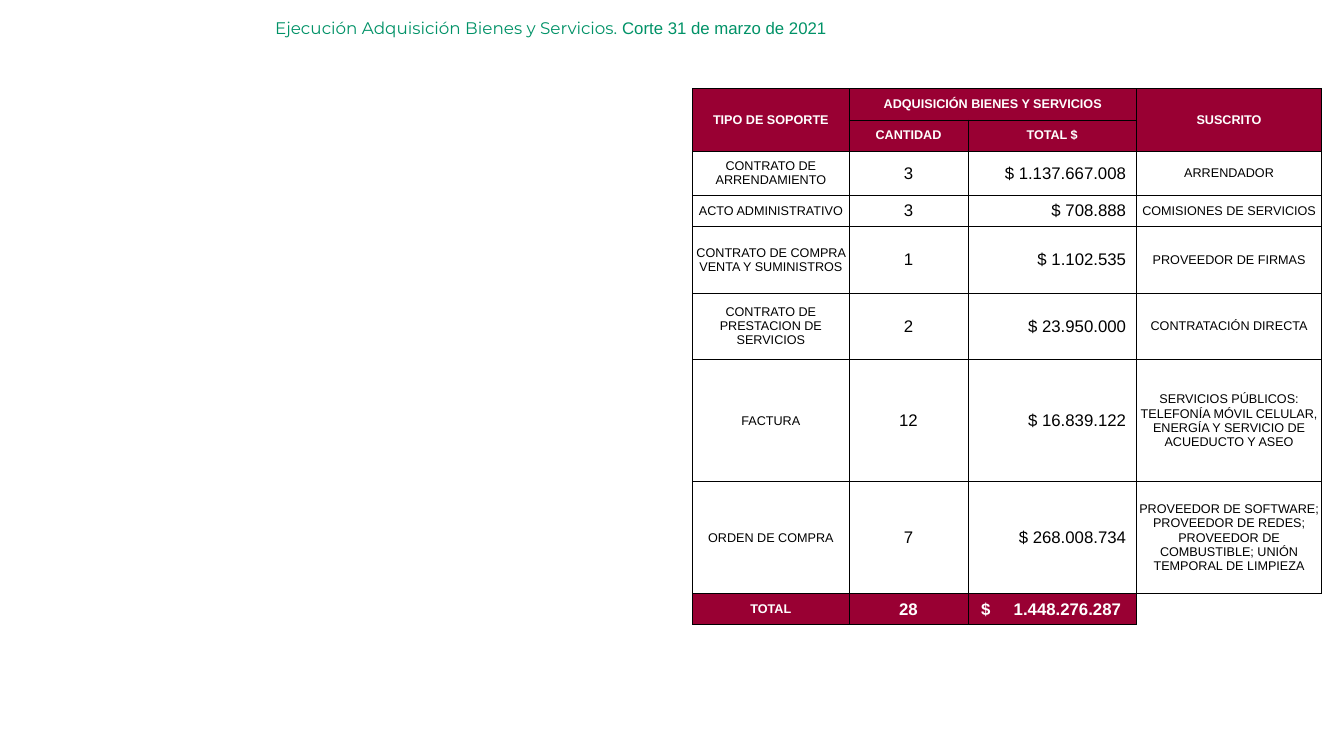
import pptx
import pptx.dml.color
import pptx.enum.text
import pptx.oxml
import pptx.oxml.ns
import pptx.util
from pptx.util import Inches

# Content
HEADING = [("Ejecución Adquisición Bienes y Servicios. ", "Montserrat"),
           ("Corte 31 de marzo de 2021", "Arial")]
ROWS = [
    ("TIPO DE SOPORTE", "ADQUISICIÓN BIENES Y SERVICIOS", "", "SUSCRITO"),
    ("", "CANTIDAD", "TOTAL $", ""),
    ("CONTRATO DE ARRENDAMIENTO", "3", "$ 1.137.667.008", "ARRENDADOR"),
    ("ACTO ADMINISTRATIVO", "3", "$ 708.888", "COMISIONES DE SERVICIOS"),
    ("CONTRATO DE COMPRA VENTA Y SUMINISTROS", "1", "$ 1.102.535", "PROVEEDOR DE FIRMAS"),
    ("CONTRATO DE PRESTACION DE SERVICIOS", "2", "$ 23.950.000", "CONTRATACIÓN DIRECTA"),
    ("FACTURA", "12", "$ 16.839.122",
     "SERVICIOS PÚBLICOS: TELEFONÍA MÓVIL CELULAR, ENERGÍA Y SERVICIO DE ACUEDUCTO Y ASEO"),
    ("ORDEN DE COMPRA", "7", "$ 268.008.734",
     "PROVEEDOR DE SOFTWARE; PROVEEDOR DE REDES; PROVEEDOR DE COMBUSTIBLE; "
     "UNIÓN TEMPORAL DE LIMPIEZA"),
    ("TOTAL", "28", "$\t1.448.276.287", ""),
]
COLUMN_WIDTHS = [1.55, 1.18, 1.67, 1.84]
ROW_HEIGHTS = [0.31, 0.31, 0.44, 0.31, 0.66, 0.66, 1.21, 1.11, 0.31]
MERGES = [((0, 0), (1, 0)), ((0, 1), (0, 2)), ((0, 3), (1, 3))]
HEADER_ROWS = 2
TOTAL_ROW = len(ROWS) - 1
GREEN, WINE, WHITE, BLACK = "009267", "990033", "FFFFFF", "000000"
ALIGN = pptx.enum.text.PP_ALIGN


def paint(target, color):
    target.rgb = pptx.dml.color.RGBColor.from_string(color)


def add_run(paragraph, text, size, color, font="Arial", bold=False):
    run = paragraph.add_run()
    run.text = text
    run.font.name, run.font.size, run.font.bold = font, pptx.util.Pt(size), bold
    paint(run.font.color, color)


def add_borders(cell, visible):
    properties = cell._tc.get_or_add_tcPr()
    for side in "LRTB":
        line = ('<a:solidFill><a:srgbClr val="%s"/></a:solidFill>' % BLACK
                if side in visible else "<a:noFill/>")
        properties.append(pptx.oxml.parse_xml(
            '<a:ln%s %s w="6350">%s</a:ln%s>'
            % (side, pptx.oxml.ns.nsdecls("a"), line, side)))


def add_right_tab(paragraph, position):
    paragraph._p.get_or_add_pPr().append(pptx.oxml.parse_xml(
        '<a:tabLst %s><a:tab pos="%d" algn="r"/></a:tabLst>'
        % (pptx.oxml.ns.nsdecls("a"), Inches(position))))


presentation = pptx.Presentation()
presentation.slide_width, presentation.slide_height = Inches(13.33), Inches(7.5)
slide = presentation.slides.add_slide(presentation.slide_layouts[6])

# Heading
heading = slide.shapes.add_textbox(Inches(2.63), Inches(0.13), Inches(10.7), Inches(0.3)).text_frame
heading.word_wrap = True
for text, font in HEADING:
    add_run(heading.paragraphs[0], text, 12, GREEN, font)

# Table of purchases
purchases = slide.shapes.add_table(
    len(ROWS), len(COLUMN_WIDTHS), Inches(6.87), Inches(0.88),
    Inches(sum(COLUMN_WIDTHS)), Inches(sum(ROW_HEIGHTS))).table
purchases.first_row = purchases.horz_banding = False
for column, width in zip(purchases.columns, COLUMN_WIDTHS):
    column.width = Inches(width)
for row, height in zip(purchases.rows, ROW_HEIGHTS):
    row.height = Inches(height)

for r, row in enumerate(ROWS):
    for c, text in enumerate(row):
        cell = purchases.cell(r, c)
        is_header, is_total = r < HEADER_ROWS, r == TOTAL_ROW
        is_corner = is_total and c == 3
        cell.margin_left = cell.margin_right = cell.margin_top = cell.margin_bottom = 0
        cell.vertical_anchor = pptx.enum.text.MSO_ANCHOR.MIDDLE
        add_borders(cell, "LT" if is_corner else "LRTB")
        if is_corner:
            cell.fill.background()
        else:
            cell.fill.solid()
            paint(cell.fill.fore_color, WINE if is_header or is_total else WHITE)

        paragraph = cell.text_frame.paragraphs[0]
        paragraph.alignment = ALIGN.CENTER
        if c == 2 and is_total:
            cell.margin_left = Inches(0.13)
            paragraph.alignment = ALIGN.LEFT
            add_right_tab(paragraph, 1.39)
        elif c == 2 and not is_header:
            cell.margin_right = Inches(0.1)
            paragraph.alignment = ALIGN.RIGHT
        if text:
            is_figure = c in (1, 2) and not is_header
            strong = is_header or is_total
            add_run(paragraph, text, 12 if is_figure else 9,
                    WHITE if strong else BLACK, bold=strong)
        else:
            paragraph.font.size = pptx.util.Pt(9)

for first, last in MERGES:
    purchases.cell(*first).merge(purchases.cell(*last))

presentation.save("out.pptx")
